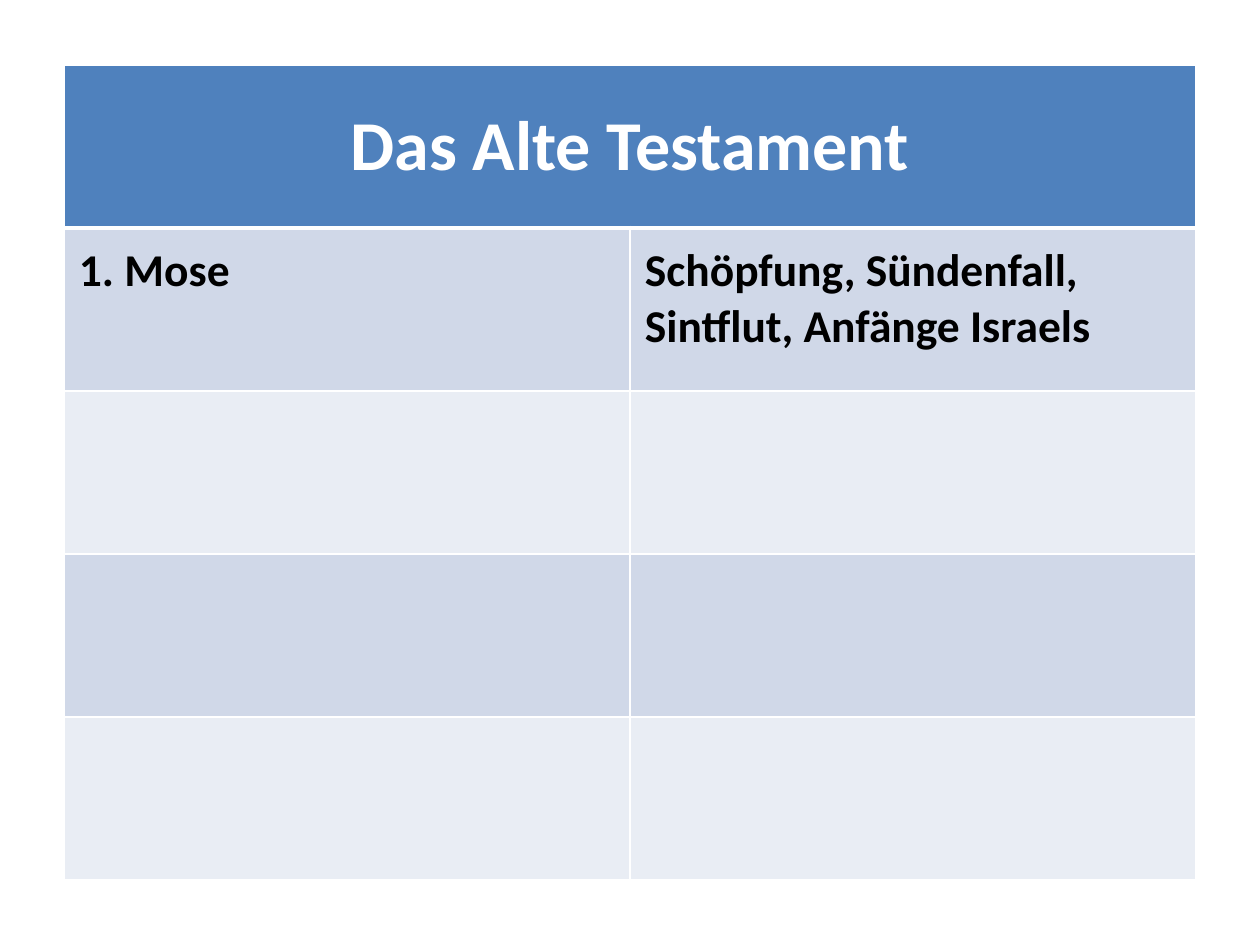
from lxml import etree
from pptx import Presentation
from pptx.dml.color import RGBColor
from pptx.enum.text import MSO_ANCHOR, PP_ALIGN
from pptx.oxml.ns import qn
from pptx.util import Pt

PX = 914400 // 126
CENTER = PP_ALIGN.CENTER
LEFT = PP_ALIGN.LEFT
MIDDLE = MSO_ANCHOR.MIDDLE
TOP = MSO_ANCHOR.TOP

WHITE = "FFFFFF"
HEADING_FILL = "4F81BD"
BAND_FILLS = ["D0D8E8", "E9EDF4"]
COLUMN_WIDTH = 566
ROW_HEIGHT = 163
BOOKS = [
    ["Das Alte Testament", ""],
    ["1. Mose", "Schöpfung, Sündenfall,\vSintflut, Anfänge Israels"],
    ["", ""],
    ["", ""],
    ["", ""],
]
BOOK_MARGINS = {
    "margin_left": 15 * PX,
    "margin_top": 15 * PX,
    "margin_right": 20 * PX,
    "margin_bottom": 10 * PX,
}


def rgb(value):
    return RGBColor.from_string(value)


def add_border(cell, side, points):
    line = etree.SubElement(
        cell._tc.get_or_add_tcPr(), qn(f"a:ln{side}"), w=str(Pt(points))
    )
    solid = etree.SubElement(line, qn("a:solidFill"))
    etree.SubElement(solid, qn("a:srgbClr"), val=WHITE)


prs = Presentation()
prs.slide_width = 1260 * PX
prs.slide_height = 945 * PX
slide = prs.slides.add_slide(prs.slide_layouts[6])

testament = slide.shapes.add_table(
    len(BOOKS), 2, 64 * PX, 65 * PX,
    2 * COLUMN_WIDTH * PX, len(BOOKS) * ROW_HEIGHT * PX,
).table
for column in testament.columns:
    column.width = COLUMN_WIDTH * PX
for row in testament.rows:
    row.height = ROW_HEIGHT * PX
testament.cell(0, 0).merge(testament.cell(0, 1))

for r, entries in enumerate(BOOKS):
    heading = r == 0
    for c, entry in enumerate(entries):
        cell = testament.cell(r, c)
        for side in "LRTB":
            thick = (heading and side == "B") or (r == 1 and side == "T")
            add_border(cell, side, 3 if thick else 1)
        cell.fill.solid()
        cell.fill.fore_color.rgb = rgb(HEADING_FILL if heading else BAND_FILLS[(r - 1) % 2])
        cell.vertical_anchor = MIDDLE if heading else TOP
        if not entry:
            continue
        if not heading:
            for name, value in BOOK_MARGINS.items():
                setattr(cell, name, value)
        cell.text = entry
        paragraph = cell.text_frame.paragraphs[0]
        paragraph.alignment = CENTER if heading else LEFT
        text_format = {"name": "Calibri", "size": Pt(40 if heading else 26), "bold": True}
        for run in paragraph.runs:
            for name, value in text_format.items():
                setattr(run.font, name, value)
            run.font.color.rgb = rgb(WHITE if heading else "000000")

prs.save("out.pptx")
